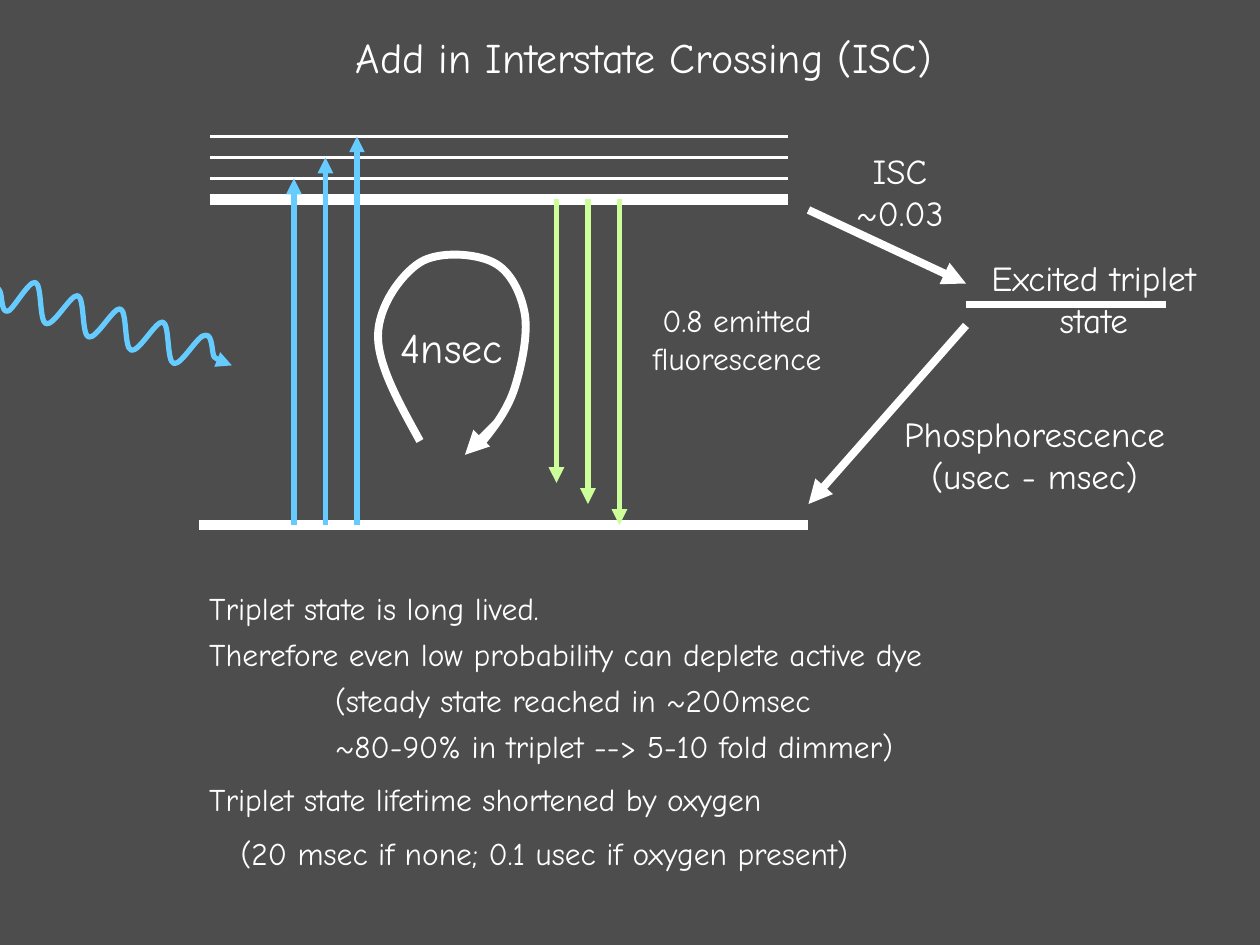
"""Energy level diagram with interstate crossing to the triplet state."""
import math
from typing import NamedTuple

from lxml import etree
from pptx import Presentation
from pptx.dml.color import RGBColor
from pptx.enum.shapes import MSO_CONNECTOR
from pptx.enum.text import MSO_ANCHOR, MSO_AUTO_SIZE, PP_ALIGN
from pptx.oxml.ns import qn
from pptx.util import Pt

STRAIGHT = MSO_CONNECTOR.STRAIGHT
MIDDLE, TOP = MSO_ANCHOR.MIDDLE, MSO_ANCHOR.TOP
GROW, FIXED = MSO_AUTO_SIZE.SHAPE_TO_FIT_TEXT, MSO_AUTO_SIZE.NONE
CENTER, LEFT = PP_ALIGN.CENTER, PP_ALIGN.LEFT
GRAY = RGBColor(0x4D, 0x4D, 0x4D)
WHITE = RGBColor(0xFF, 0xFF, 0xFF)
BLUE = RGBColor(0x66, 0xCC, 0xFF)
GREEN = RGBColor(0xCC, 0xFF, 0x99)
FONT = "Comic Neue"
Point = tuple[float, float]


class Line(NamedTuple):
    x1: float
    y1: float
    x2: float
    y2: float
    color: RGBColor = WHITE
    width: float = 4.5
    arrow: bool = True


class Label(NamedTuple):
    x: float
    y: float
    w: float
    h: float
    size: float
    lines: tuple[str, ...]


class Note(NamedTuple):
    text: str
    indent: float = 0
    spacing: float = 0.8


LEVELS = [Line(120, y, 450, y, WHITE, w, False)
          for y, w in ((114, 6), (102, 1.5), (90, 1.5), (78, 1.5))]
ABSORPTION = [Line(168 + 18 * i, 300, 168 + 18 * i, 102 - 12 * i, BLUE, 3)
              for i in range(3)]
EMISSION = [Line(318 + 18 * i, 114, 318 + 18 * i, 276 + 12 * i, GREEN, 3)
            for i in range(3)]
GROUND = Line(114, 300, 462, 300, WHITE, 6, False)
PHOTON_TIP = Line(125.3, 205.9, 132.5, 208.8, BLUE, 3)
LOOP_TIP = Line(283.7, 241.9, 265.7, 259.9)
TRIPLET = [
    Line(462, 120, 552, 162),
    Line(552, 174, 666, 174, arrow=False),
    Line(552, 186, 462, 288),
]

WAVE_START = [(-2.9, 164.2), (-2.2, 164.9), (-0.7, 164.2), (0, 166.3),
              (1.4, 168.5), (0.7, 178.6), (4.3, 177.8)]
WAVE_RISE = [(-13.5, 17.2), (-4, -0.7), (0, 0)]
WAVE_FALL = [(4.1, 1.2), (2.1, 22.5), (6.3, 23.7)]
WAVE_END = [(121.7, 190.8), (121, 200.9), (122.4, 203.8),
            (124.6, 205.9), (126.7, 205.9), (127.4, 206.6)]
WAVE_CENTER, WAVE_ANGLE = (62.6, 185.4), 17
LOOP = [(240, 252), (228, 230.4), (216, 208.8), (216, 192),
        (216, 175.2), (229, 157), (240, 150),
        (250.6, 143.3), (272, 144.7), (282, 150),
        (292, 155), (298, 168), (300, 180),
        (301.7, 192), (298, 209.5), (294, 222),
        (290, 234), (283, 243.4), (276, 252)]

LABELS = [
    Label(218.6, 177.5, 79, 41, 24, ("4nsec",)),
    Label(175.5, 12, 385, 41, 24, ("Add in Interstate Crossing (ISC)",)),
    Label(360, 165, 122.4, 57.5, 18, ("0.8 emitted", "fluorescence")),
    Label(480, 77.5, 68.4, 63.5, 20, ("ISC", "~0.03")),
    Label(548, 139, 154, 63.5, 20, ("Excited triplet", "state")),
    Label(504.7, 228, 173, 63.5, 20, ("Phosphorescence", "(usec - msec)")),
]
NOTES = [
    Note("Triplet state is long lived."),
    Note("Therefore even low probability can deplete active dye"),
    Note("(steady state reached in ~200msec", 72),
    Note("~80-90% in triplet --> 5-10 fold dimmer)", 72),
    Note("Triplet state lifetime shortened by oxygen", spacing=1),
    Note("(20 msec if none; 0.1 usec if oxygen present)", 18, 1),
]


def add_line(s, line: Line) -> None:
    c = s.shapes.add_connector(STRAIGHT, Pt(line.x1), Pt(line.y1),
                               Pt(line.x2), Pt(line.y2))
    c.line.color.rgb = line.color
    c.line.width = Pt(line.width)
    if line.arrow:
        etree.SubElement(c.line._get_or_add_ln(), qn("a:tailEnd"), type="triangle")
    etree.SubElement(c._element.spPr, qn("a:effectLst"))


def turn(point: Point, center: Point, degrees: float) -> Point:
    a = math.radians(degrees)
    dx, dy = point[0] - center[0], point[1] - center[1]
    return (center[0] + dx * math.cos(a) - dy * math.sin(a),
            center[1] + dx * math.sin(a) + dy * math.cos(a))


def add_curve(s, nodes: list[Point], color: RGBColor, width: float, rotation: float = 0) -> None:
    """Draw a chain of cubic Bezier nodes as an open outline."""
    first, *rest = [(Pt(x), Pt(y)) for x, y in nodes]
    builder = s.shapes.build_freeform(*first)
    builder.add_line_segments(rest, close=False)
    sp = builder.convert_to_shape()
    segments = list(sp._element.iter(qn("a:lnTo")))
    for i in range(0, len(segments), 3):
        bezier = etree.SubElement(segments[i].getparent(), qn("a:cubicBezTo"))
        for segment in segments[i:i + 3]:
            bezier.append(segment[0])
            segment.getparent().remove(segment)
    sp.rotation = rotation
    sp.shadow.inherit = False
    sp.fill.background()
    sp.line.color.rgb = color
    sp.line.width = Pt(width)


def wave_nodes() -> list[Point]:
    nodes = list(WAVE_START)
    for i in range(5):
        x, y = 20.2 + 24.3 * i, 161.3 + 7.56 * i
        offsets = WAVE_RISE + WAVE_FALL if i < 4 else WAVE_RISE
        nodes += [(x + dx, y + dy) for dx, dy in offsets]
    return [turn(node, WAVE_CENTER, -WAVE_ANGLE) for node in nodes + WAVE_END]


def add_text(s, x: float, y: float, w: float, h: float, size: float, lines: list[str],
             align=CENTER, anchor=MIDDLE, fit=GROW, wrap: bool = False):
    tf = s.shapes.add_textbox(Pt(x), Pt(y), Pt(w), Pt(h)).text_frame
    tf.word_wrap, tf.auto_size, tf.vertical_anchor = wrap, fit, anchor
    tf.text = "\n".join(lines)
    for p in tf.paragraphs:
        p.alignment = align
        p.font.name, p.font.size, p.font.color.rgb = FONT, Pt(size), WHITE
    return tf


def add_notes(s) -> None:
    tf = add_text(s, 112.4, 326, 495, 204, 18, [n.text for n in NOTES], LEFT, TOP, FIXED, True)
    tf.margin_top = Pt(14.6)
    for i, (p, note) in enumerate(zip(tf.paragraphs, NOTES)):
        p.line_spacing = note.spacing
        if i:
            p.space_before = Pt(9)
        if note.indent:
            p._p.get_or_add_pPr().set("marL", str(Pt(note.indent)))


def main() -> None:
    prs = Presentation()
    prs.slide_width, prs.slide_height = Pt(720), Pt(540)
    s = prs.slides.add_slide(prs.slide_layouts[6])
    s.background.fill.solid()
    s.background.fill.fore_color.rgb = GRAY
    add_line(s, GROUND)
    add_curve(s, wave_nodes(), BLUE, 3, WAVE_ANGLE)
    for line in [PHOTON_TIP, *LEVELS, *ABSORPTION, *EMISSION]:
        add_line(s, line)
    add_curve(s, LOOP, WHITE, 4.5)
    add_line(s, LOOP_TIP)
    for label in LABELS[:3]:
        add_text(s, *label)
    for line in TRIPLET:
        add_line(s, line)
    for label in LABELS[3:]:
        add_text(s, *label)
    add_notes(s)
    prs.save("out.pptx")


if __name__ == "__main__":
    main()
